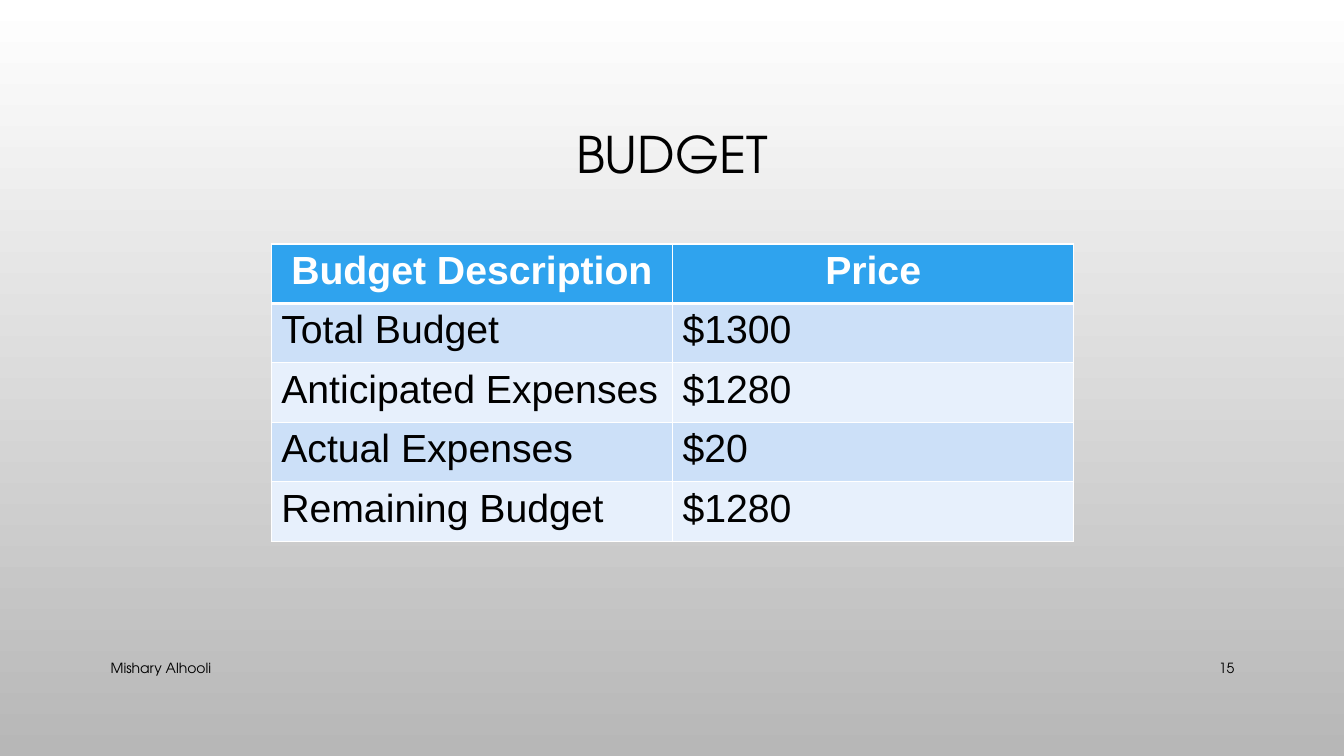
from dataclasses import dataclass

from lxml import etree
from pptx import Presentation
from pptx.dml.color import RGBColor
from pptx.enum.text import MSO_ANCHOR, PP_ALIGN
from pptx.oxml.ns import qn
from pptx.util import Inches, Pt

MIDDLE = MSO_ANCHOR.MIDDLE
LEFT, CENTER, RIGHT = PP_ALIGN.LEFT, PP_ALIGN.CENTER, PP_ALIGN.RIGHT
HEAD_FONT, BODY_FONT = "TeX Gyre Adventor", "Arial"
BLACK, WHITE, GRAY = "000000", "FFFFFF", "B7B7B7"
BLUE, BANDS = "2FA3EE", ("CCE0F8", "E7F0FC")


@dataclass
class Label:
    text: str
    left: float
    top: float
    width: float
    height: float
    size: int
    align: PP_ALIGN
    spacing: float = 1.0


LABELS = [
    Label("BUDGET", 1, 0.68, 11.33, 1.75, 36, CENTER, 0.9),
    Label("Mishary Alhooli", 1, 6.43, 7.3, 0.4, 10, LEFT),
    Label("15", 11.5, 6.43, 0.84, 0.4, 10, RIGHT),
]
BUDGET = [
    ("Budget Description", "Price"),
    ("Total Budget", "$1300"),
    ("Anticipated Expenses", "$1280"),
    ("Actual Expenses", "$20"),
    ("Remaining Budget", "$1280"),
]


def color(code: str) -> RGBColor:
    return RGBColor.from_string(code)


def style(para, font: str, size: int, code: str, align: PP_ALIGN, bold: bool = False) -> None:
    para.alignment = align
    for run in para.runs:
        run.font.name = font
        run.font.size = Pt(size)
        run.font.bold = bold
        run.font.color.rgb = color(code)


def add_label(slide, label: Label) -> None:
    box = slide.shapes.add_textbox(Inches(label.left), Inches(label.top),
                                   Inches(label.width), Inches(label.height))
    frame = box.text_frame
    frame.word_wrap = True
    frame.vertical_anchor = MIDDLE
    frame.text = label.text
    para = frame.paragraphs[0]
    para.line_spacing = label.spacing
    style(para, HEAD_FONT, label.size, BLACK, label.align)


def add_borders(cell, top: int, bottom: int) -> None:
    """Draw white cell borders; widths are in points."""
    props = cell._tc.get_or_add_tcPr()
    sides = {"a:lnL": 1, "a:lnR": 1, "a:lnT": top, "a:lnB": bottom}
    for place, (tag, width) in enumerate(sides.items()):
        line = etree.Element(qn(tag), w=str(Pt(width)))
        fill = etree.SubElement(line, qn("a:solidFill"))
        etree.SubElement(fill, qn("a:srgbClr"), val=WHITE)
        props.insert(place, line)


def add_budget(slide) -> None:
    table = slide.shapes.add_table(len(BUDGET), 2, Inches(2.69), Inches(2.42),
                                   Inches(7.96), Inches(2.95)).table
    for i, row in enumerate(BUDGET):
        head = i == 0
        for j, text in enumerate(row):
            cell = table.cell(i, j)
            cell.text = text
            cell.fill.solid()
            cell.fill.fore_color.rgb = color(BLUE if head else BANDS[(i - 1) % 2])
            add_borders(cell, 3 if i == 1 else 1, 3 if head else 1)
            style(cell.text_frame.paragraphs[0], BODY_FONT, 28,
                  WHITE if head else BLACK, CENTER if head else LEFT, head)


def main() -> None:
    deck = Presentation()
    deck.slide_width, deck.slide_height = Inches(13.33), Inches(7.5)
    slide = deck.slides.add_slide(deck.slide_layouts[6])

    # Background fading downwards
    fill = slide.background.fill
    fill.gradient()
    fill.gradient_angle = 270
    for stop, code in zip(fill.gradient_stops, (WHITE, GRAY)):
        stop.color.rgb = color(code)

    # Title, footer and page number
    for label in LABELS:
        add_label(slide, label)

    # Budget table
    add_budget(slide)
    deck.save("out.pptx")


if __name__ == "__main__":
    main()
